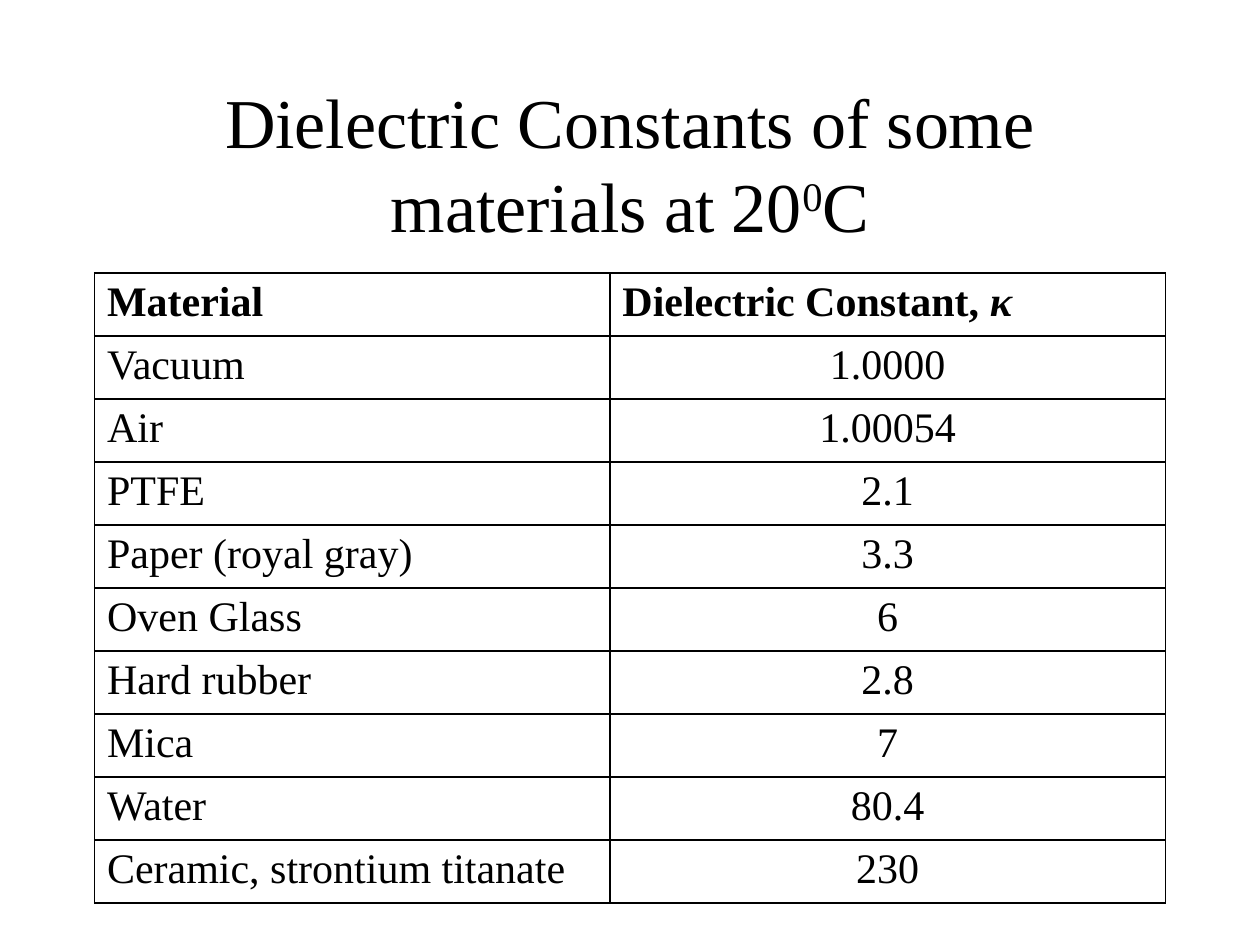
from lxml.etree import SubElement
from pptx import Presentation
from pptx.dml.color import RGBColor
from pptx.enum.text import MSO_ANCHOR, PP_ALIGN
from pptx.oxml.ns import qn
from pptx.util import Pt

FONT = "Times New Roman"
INK = "000000"
LEFT, WIDTH = 54, 612
COLUMN_WIDTHS = (294.5, 317.5)
ROW_HEIGHT = 36
BORDER_WIDTH = 1

TITLE = [
    ("Dielectric Constants of some materials at 20", {}),
    ("0", {"baseline": 30000}),
    ("C", {}),
]
HEADER = [
    [("Material", {"bold": True})],
    [("Dielectric Constant, ", {"bold": True}), ("κ", {"bold": True, "italic": True})],
]
MATERIALS = [
    ("Vacuum", "1.0000"),
    ("Air", "1.00054"),
    ("PTFE", "2.1"),
    ("Paper (royal gray)", "3.3"),
    ("Oven Glass", "6"),
    ("Hard rubber", "2.8"),
    ("Mica", "7"),
    ("Water", "80.4"),
    ("Ceramic, strontium titanate", "230"),
]


def color(hex_value):
    return RGBColor.from_string(hex_value)


def write(frame, runs, size, align):
    paragraph = frame.paragraphs[0]
    paragraph.alignment = align
    for text, style in runs:
        run = paragraph.add_run()
        run.text = text
        font = run.font
        font.name, font.size = FONT, Pt(size)
        font.color.rgb = color(INK)
        font.bold = style.get("bold", False)
        font.italic = style.get("italic", False)
        if "baseline" in style:
            font._element.set("baseline", str(style["baseline"]))


def add_borders(cell):
    properties = cell._tc.get_or_add_tcPr()
    for position, side in enumerate(("lnL", "lnR", "lnT", "lnB")):
        line = properties.makeelement(qn(f"a:{side}"), {"w": str(Pt(BORDER_WIDTH))})
        fill = SubElement(line, qn("a:solidFill"))
        SubElement(fill, qn("a:srgbClr"), val=INK)
        properties.insert(position, line)  # borders come before the cell fill


def add_title(slide):
    title = slide.shapes.title
    title.left, title.top = Pt(LEFT), Pt(48)
    title.width, title.height = Pt(WIDTH), Pt(90)
    title.text_frame.vertical_anchor = MSO_ANCHOR.MIDDLE
    title.text_frame.word_wrap = True
    write(title.text_frame, TITLE, 40, PP_ALIGN.CENTER)


def add_constants(slide):
    rows = [HEADER] + [[[(text, {})] for text in row] for row in MATERIALS]
    table = slide.shapes.add_table(
        len(rows), len(COLUMN_WIDTHS),
        Pt(LEFT), Pt(156), Pt(WIDTH), Pt(ROW_HEIGHT * len(rows)),
    ).table
    table.horz_banding = False
    for column, width in zip(table.columns, COLUMN_WIDTHS):
        column.width = Pt(width)
    for r, row in enumerate(rows):
        table.rows[r].height = Pt(ROW_HEIGHT)
        for c, runs in enumerate(row):
            cell = table.cell(r, c)
            cell.fill.background()
            add_borders(cell)
            is_value = r > 0 and c == 1
            write(cell.text_frame, runs, 24,
                  PP_ALIGN.CENTER if is_value else PP_ALIGN.LEFT)


def main():
    deck = Presentation()
    deck.slide_width, deck.slide_height = Pt(720), Pt(540)
    slide = deck.slides.add_slide(deck.slide_layouts.get_by_name("Title Only"))
    slide.background.fill.solid()
    slide.background.fill.fore_color.rgb = color("FFFFFF")
    add_title(slide)
    add_constants(slide)
    deck.save("out.pptx")


if __name__ == "__main__":
    main()
